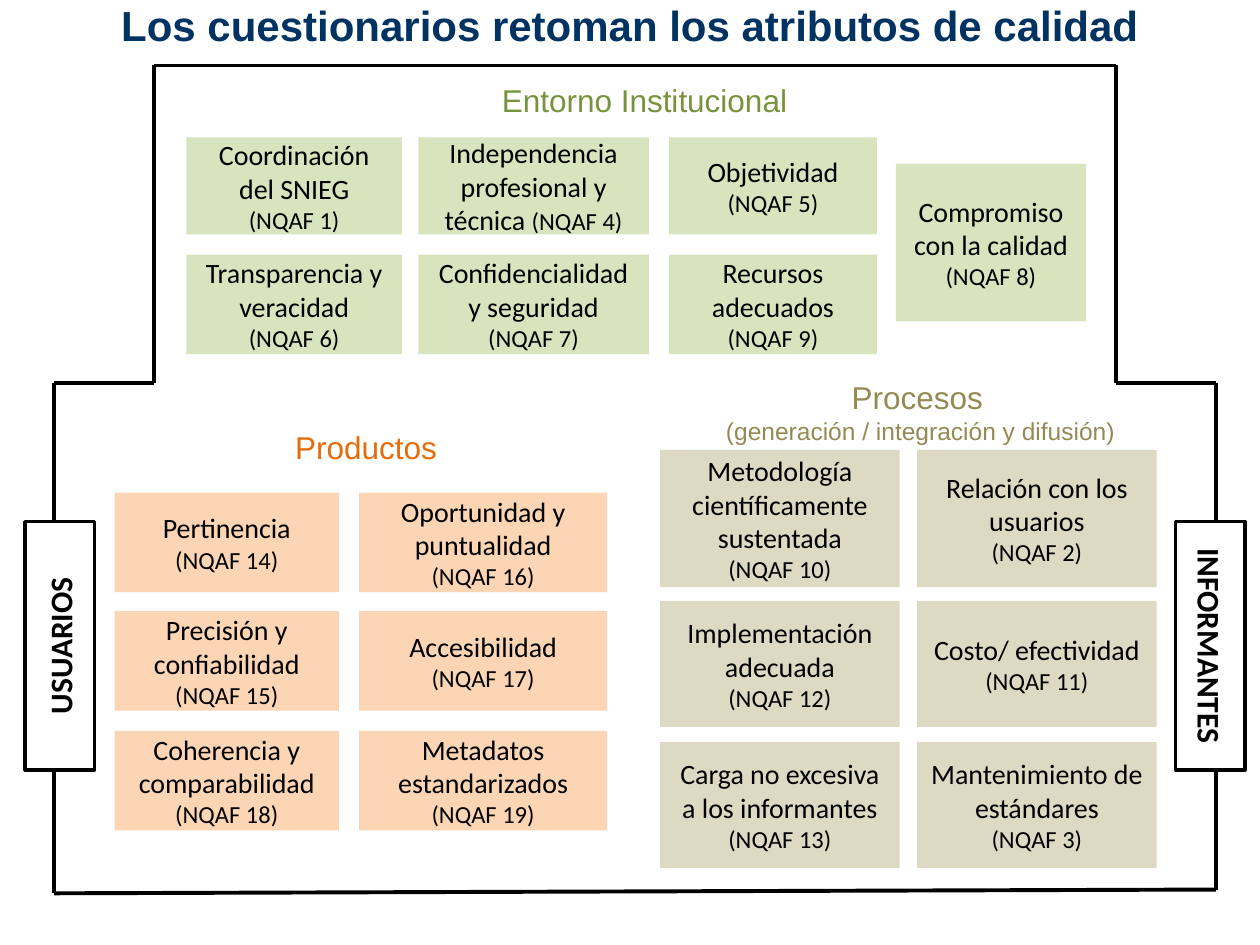
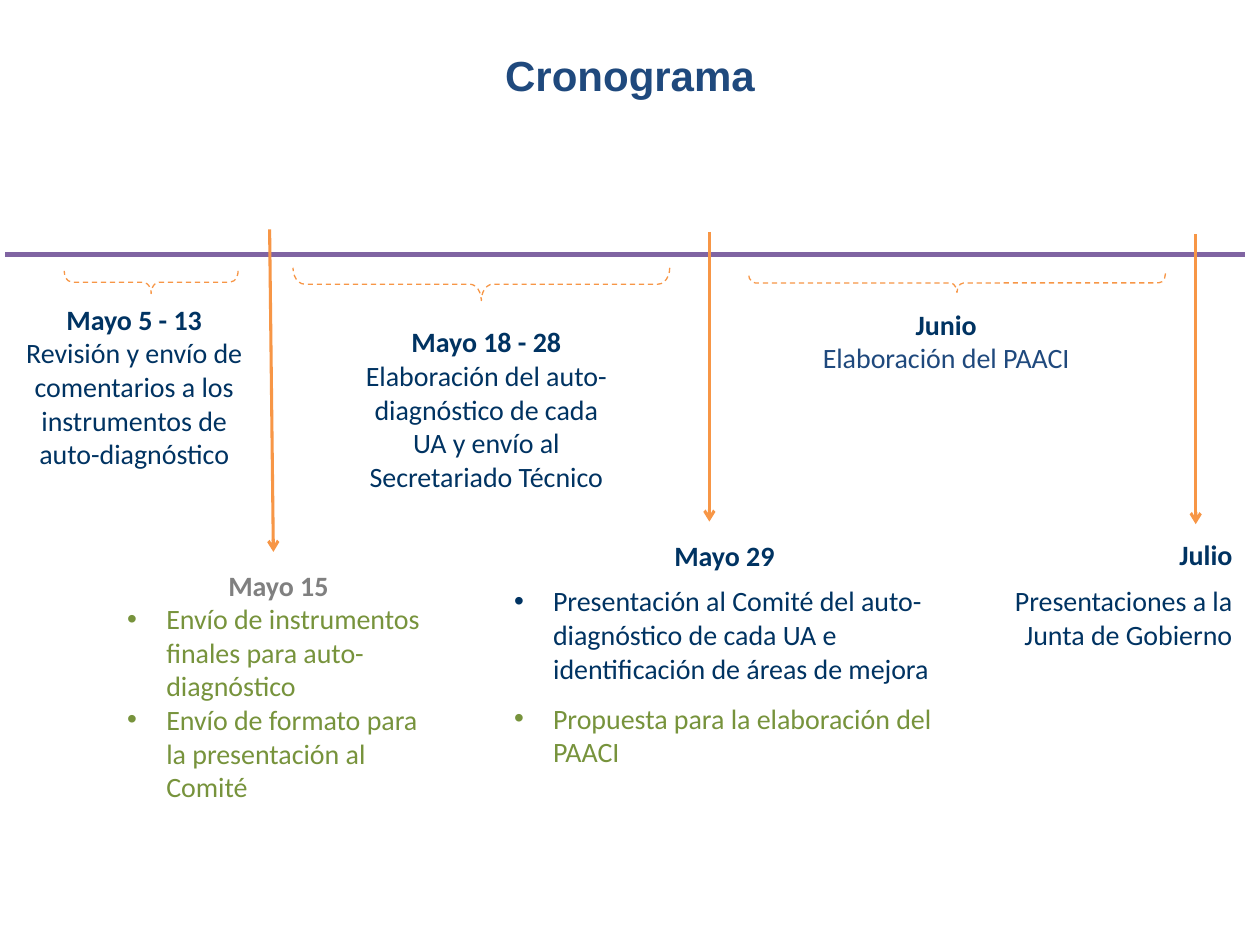
"""Builds two slides: the quality attributes behind the questionnaires and the schedule."""
import itertools

import pptx
import pptx.dml.color
import pptx.enum.dml
import pptx.enum.shapes
import pptx.enum.text
import pptx.oxml
import pptx.oxml.ns
import pptx.util
from lxml import etree

NAVY, BLUE, BLACK, WHITE = "003362", "1F497D", "000000", "FFFFFF"
GREEN, OLIVE, ORANGE, GREY = "77933C", "948A54", "F79646", "808080"
Inches = pptx.util.Inches
Pt = pptx.util.Pt
rgb = pptx.dml.color.RGBColor.from_string
qn = pptx.oxml.ns.qn
RECTANGLE = pptx.enum.shapes.MSO_SHAPE.RECTANGLE
LEFT, CENTER, RIGHT = (pptx.enum.text.PP_ALIGN.LEFT, pptx.enum.text.PP_ALIGN.CENTER,
                       pptx.enum.text.PP_ALIGN.RIGHT)
MIDDLE = pptx.enum.text.MSO_ANCHOR.MIDDLE


def style_runs(paragraph, size, colour, bold=False, font="Calibri"):
    for run in paragraph.runs:
        run.font.name = font
        run.font.size = Pt(size)
        run.font.bold = bold
        run.font.color.rgb = rgb(colour)


def draw_line(slide, start, end, colour, width, arrow=False):
    line = slide.shapes.add_connector(
        pptx.enum.shapes.MSO_CONNECTOR.STRAIGHT, *(Inches(v) for v in start + end))
    line.line.color.rgb = rgb(colour)
    line.line.width = Pt(width)
    if arrow:
        etree.SubElement(line.line._get_or_add_ln(), qn("a:tailEnd"), type="arrow")
    etree.SubElement(line._element.spPr, qn("a:effectLst"))


deck = pptx.Presentation()
deck.slide_width, deck.slide_height = Inches(10), Inches(7.5)

attributes = deck.slides.add_slide(deck.slide_layouts[5])
schedule = deck.slides.add_slide(deck.slide_layouts[3])
for slide, heading, top, colour in (
        (attributes, "Los cuestionarios retoman los atributos de calidad", -0.19, NAVY),
        (schedule, "Cronograma", 0.21, BLUE)):
    title = slide.shapes.title
    title.left, title.top, title.width, title.height = (
        Inches(v) for v in (0.5, top, 9, 0.77))
    title.text_frame.text = heading
    title.text_frame.vertical_anchor = MIDDLE
    title.text_frame.paragraphs[0].alignment = CENTER
    style_runs(title.text_frame.paragraphs[0], 24, colour, True, "Arial")

outline = [(1.22, 0.52), (8.86, 0.52), (8.86, 3.04), (9.65, 3.04), (9.65, 7.06),
           (0.43, 7.09), (0.43, 3.04), (1.22, 3.04), (1.22, 0.52)]
for start, end in itertools.pairwise(outline):
    draw_line(attributes, start, end, BLACK, 2.25)

for label, left, rotation in (("INFORMANTES", 8.62, 90), ("USUARIOS", -0.51, 270)):
    audience = attributes.shapes.add_shape(
        RECTANGLE, Inches(left), Inches(4.85), Inches(1.97), Inches(0.55))
    audience.rotation = rotation
    audience.shadow.inherit = False
    audience.fill.solid()
    audience.fill.fore_color.rgb = rgb(WHITE)
    audience.line.color.rgb = rgb(BLACK)
    audience.line.width = Pt(2)
    audience.text_frame.text = label
    audience.text_frame.vertical_anchor = MIDDLE
    audience.text_frame.paragraphs[0].alignment = CENTER
    style_runs(audience.text_frame.paragraphs[0], 18, BLACK, True)

dimensions = [
    ("D7E4BD", [(1.48, 1.71), (3.32, 1.83), (5.31, 1.65)], [(1.09, 0.77), (2.02, 0.79)],
     [("Coordinación del SNIEG", 1), ("Independencia profesional y técnica ", 4),
      ("Objetividad", 5), ("Transparencia y veracidad", 6),
      ("Confidencialidad y seguridad", 7), ("Recursos adecuados", 9)]),
    ("D7E4BD", [(7.11, 1.51)], [(1.3, 1.25)], [("Compromiso con la calidad ", 8)]),
    ("FCD5B5", [(0.91, 1.78), (2.85, 1.97)], [(3.91, 0.79), (4.85, 0.79), (5.8, 0.79)],
     [("Pertinencia ", 14), ("Oportunidad y puntualidad", 16),
      ("Precisión y confiabilidad ", 15), ("Accesibilidad", 17),
      ("Coherencia y comparabilidad", 18), ("Metadatos estandarizados", 19)]),
    ("DDD9C3", [(5.24, 1.9), (7.28, 1.9)], [(3.57, 1.09), (4.77, 1), (5.89, 1)],
     [("Metodología científicamente sustentada", 10), ("Relación con los usuarios", 2),
      ("Implementación adecuada", 12), ("Costo/ efectividad", 11),
      ("Carga no excesiva a los informantes", 13), ("Mantenimiento de estándares", 3)]),
]
for fill, columns, rows, names in dimensions:
    cells = itertools.product(rows, columns)
    for ((top, height), (left, width)), (name, number) in zip(cells, names):
        attribute = attributes.shapes.add_shape(
            RECTANGLE, Inches(left), Inches(top), Inches(width), Inches(height))
        attribute.shadow.inherit = False
        attribute.fill.solid()
        attribute.fill.fore_color.rgb = rgb(fill)
        attribute.line.fill.background()
        frame = attribute.text_frame
        frame.vertical_anchor = MIDDLE
        frame.text = name
        style_runs(frame.paragraphs[0], 16, BLACK)
        same_line = name.endswith(" ")
        code_line = frame.paragraphs[0] if same_line else frame.add_paragraph()
        code = code_line.add_run()
        code.text = f"(NQAF {number})"
        code.font.name = "Calibri"
        code.font.size = Pt(14)
        code.font.color.rgb = rgb(BLACK)
        for paragraph in frame.paragraphs:
            paragraph.alignment = CENTER

for text, left, top, width, height, colour in (
        ("Productos", 2.1, 3.35, 1.61, 0.4, "E46C0A"),
        ("Entorno Institucional", 3.57, 0.59, 3.09, 0.4, GREEN),
        ("Procesos\n (generación / integración y difusión)", 5.31, 2.95, 3.94, 0.64, OLIVE)):
    dimension = attributes.shapes.add_textbox(
        Inches(left), Inches(top), Inches(width), Inches(height))
    dimension.text_frame.word_wrap = True
    dimension.text_frame.text = text
    for paragraph, size in zip(dimension.text_frame.paragraphs, (18, 14)):
        paragraph.alignment = CENTER
        style_runs(paragraph, size, colour, font="Arial")

draw_line(schedule, (0.04, 2.02), (9.88, 2.02), "8064A2", 3.25)
for start, end in (((2.14, 1.82), (2.17, 4.38)), ((5.63, 1.84), (5.63, 4.14)),
                   ((9.49, 1.86), (9.49, 4.16))):
    draw_line(schedule, start, end, ORANGE, 1.75, arrow=True)

for left, top, width, height in ((1.11, 1.55, 0.18, 1.38), (3.69, 0.76, 0.26, 2.99),
                                 (7.52, 0.59, 0.15, 3.31)):
    period = schedule.shapes.add_shape(
        pptx.enum.shapes.MSO_SHAPE.LEFT_BRACE,
        Inches(left), Inches(top), Inches(width), Inches(height))
    period.rotation = 270
    period.adjustments[0] = 0.355
    period.adjustments[1] = 0.5
    period.shadow.inherit = False
    period.fill.background()
    period.line.color.rgb = rgb(ORANGE)
    period.line.width = Pt(0.75)
    period.line.dash_style = pptx.enum.dml.MSO_LINE.DASH

first_list, second_list = (schedule.placeholders[index] for index in (1, 2))
milestones = [
    (None, (0.04, 2.35, 2.05, 1.45), CENTER, ("Mayo 5 - 13", NAVY),
     [("Revisión y envío de comentarios a los instrumentos de auto-diagnóstico", NAVY, 0)]),
    (None, (2.8, 2.53, 2.12, 1.45), CENTER, ("Mayo 18 - 28", NAVY),
     [("Elaboración del auto-diagnóstico de cada UA y envío al Secretariado Técnico",
       NAVY, 0)]),
    (None, (6.1, 2.39, 2.82, 0.77), CENTER, ("Junio", NAVY),
     [("Elaboración del PAACI", BLUE, 0)]),
    (first_list, (0.91, 4.46, 2.6, 1.99), CENTER, ("Mayo 15", GREY),
     [("Envío de instrumentos finales para auto-diagnóstico", GREEN, 0),
      ("Envío de formato para la presentación al Comité", GREEN, 0)]),
    (second_list, (3.98, 4.22, 3.54, 1.95), CENTER, ("Mayo 29", NAVY),
     [("Presentación al Comité del auto-diagnóstico de cada UA e identificación de "
       "áreas de mejora", NAVY, 7),
      ("Propuesta para la elaboración del PAACI", GREEN, 9.5)]),
    (None, (7.87, 4.22, 2.01, 1.01), RIGHT, ("Julio", NAVY),
     [("Presentaciones a la", NAVY, 7), ("Junta de Gobierno", NAVY, 0)]),
]
for bulleted, place, align, (date, date_colour), tasks in milestones:
    left, top, width, height = (Inches(v) for v in place)
    milestone = bulleted or schedule.shapes.add_textbox(left, top, width, height)
    milestone.left, milestone.top, milestone.width, milestone.height = left, top, width, height
    frame = milestone.text_frame
    frame.word_wrap = True
    frame.auto_size = pptx.enum.text.MSO_AUTO_SIZE.NONE
    frame.text = "\n".join([date] + [task for task, _, _ in tasks])
    lines = [(date_colour, 0)] + [(colour, space) for _, colour, space in tasks]
    for paragraph, (colour, space) in zip(frame.paragraphs, lines):
        is_date = paragraph.text == date
        is_bullet = bool(bulleted) and not is_date
        paragraph.alignment = LEFT if is_bullet else align
        paragraph.space_before = Pt(space)
        properties = paragraph._p.get_or_add_pPr()
        indent = Inches(0.31) if is_bullet else 0
        properties.set("marL", str(indent))
        properties.set("indent", str(-indent))
        if is_bullet:
            etree.SubElement(properties, qn("a:buFont"), typeface="Arial")
            etree.SubElement(properties, qn("a:buChar"), char="•")
        else:
            etree.SubElement(properties, qn("a:buNone"))
        style_runs(paragraph, 16, colour, is_date)

deck.save("out.pptx")
